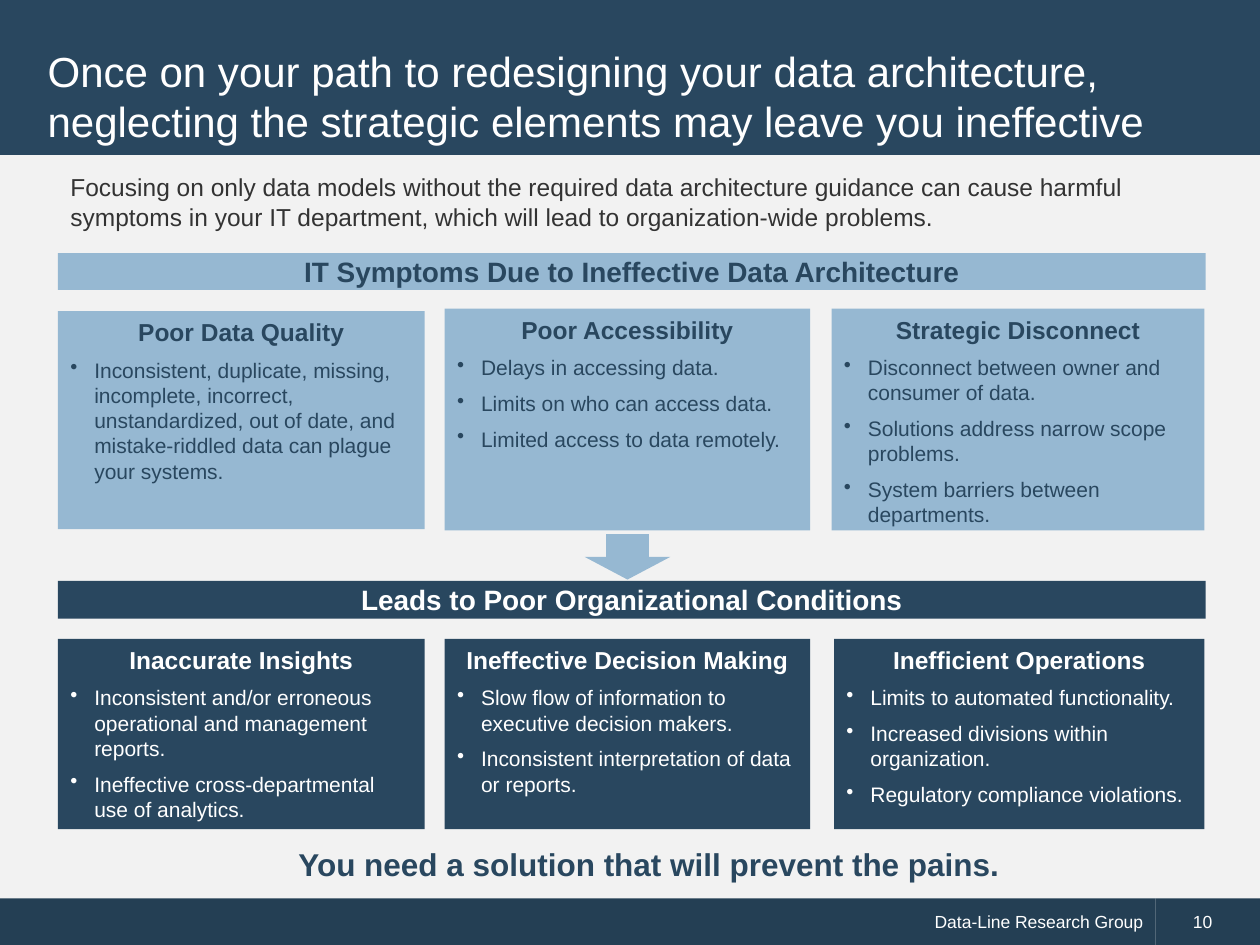
import pptx
import pptx.util
import pptx.dml.color
import pptx.enum.shapes
import pptx.enum.text
import lxml.etree

Inches = pptx.util.Inches
Pt = pptx.util.Pt
RGBColor = pptx.dml.color.RGBColor
SHAPE = pptx.enum.shapes.MSO_SHAPE
ALIGN = pptx.enum.text.PP_ALIGN
ANCHOR = pptx.enum.text.MSO_ANCHOR

NAVY = RGBColor(0x29, 0x47, 0x5F)
FOOTER = RGBColor(0x24, 0x3F, 0x54)
SKY = RGBColor(0x96, 0xB8, 0xD2)
PALE = RGBColor(0xF2, 0xF2, 0xF2)
GREY = RGBColor(0x33, 0x33, 0x33)
WHITE = RGBColor(0xFF, 0xFF, 0xFF)

prs = pptx.Presentation()
prs.slide_width, prs.slide_height = Inches(10), Inches(7.5)
s = prs.slides.add_slide(prs.slide_layouts[6])
s.background.fill.solid()
s.background.fill.fore_color.rgb = PALE


def add_box(left, top, width, height, fill=None, shape=SHAPE.RECTANGLE):
    """Add a filled shape without outline, or a text box when there is no fill."""
    at = [Inches(v) for v in (left, top, width, height)]
    if fill is None:
        sp = s.shapes.add_textbox(*at)
    else:
        sp = s.shapes.add_shape(shape, *at)
        sp.shadow.inherit = False
        sp.fill.solid()
        sp.fill.fore_color.rgb = fill
        sp.line.fill.background()
    sp.text_frame.word_wrap = True
    return sp


def add_text(sp, text, size=12, color=WHITE, bold=False, align=ALIGN.LEFT,
             anchor=ANCHOR.TOP, after=0, indent=0, bullet=False):
    """Fill the first paragraph of the shape, or append one if it is taken."""
    tf = sp.text_frame
    tf.vertical_anchor = anchor
    p = tf.paragraphs[0]
    if p.runs:
        p = tf.add_paragraph()
    p.alignment = align
    p.space_after = Pt(after)
    pPr = p._p.get_or_add_pPr()
    pPr.set("marL", str(Inches(indent)))
    if bullet:
        pPr.set("indent", str(-Inches(indent)))
        bu = lxml.etree.SubElement(pPr, pptx.oxml.ns.qn("a:buChar"))
        bu.set("char", "•")
    r = p.add_run()
    r.text = text
    r.font.name = "Arial"
    r.font.size = Pt(size)
    r.font.bold = bold
    r.font.color.rgb = color


# Title band and footer
add_box(0, 0, 10, 1.23, NAVY)
title = add_box(0.28, 0.28, 9.43, 0.96)
add_text(title, "Once on your path to redesigning your data architecture, "
         "neglecting the strategic elements may leave you ineffective",
         size=24, anchor=ANCHOR.MIDDLE)
footer = add_box(0, 7.13, 9.17, 0.37, FOOTER)
add_text(footer, "Data-Line Research Group", size=10, align=ALIGN.RIGHT,
         anchor=ANCHOR.MIDDLE, indent=0.29)
number = add_box(9.17, 7.13, 0.83, 0.37, FOOTER)
add_text(number, "10", size=10, anchor=ANCHOR.MIDDLE, indent=0.2)

# Introduction and conclusion
intro = add_box(0.46, 1.32, 9.25, 0.57)
add_text(intro, "Focusing on only data models without the required data architecture "
         "guidance can cause harmful symptoms in your IT department, which will lead "
         "to organization-wide problems.", size=14, color=GREY)
conclusion = add_box(2.27, 6.66, 5.82, 0.4)
add_text(conclusion, "You need a solution that will prevent the pains.",
         size=18, color=NAVY, bold=True)

# Each section: heading, heading top and height, fill, text colour, cards.
# Each card: left, top, width, height, heading, bullets.
sections = [
    ("IT Symptoms Due to Ineffective Data Architecture", 2.01, 0.29, SKY, NAVY, [
        (0.46, 2.47, 2.91, 1.73, "Poor Data Quality", [
            "Inconsistent, duplicate, missing, incomplete, incorrect, unstandardized, "
            "out of date, and mistake-riddled data can plague your systems."]),
        (3.53, 2.45, 2.9, 1.76, "Poor Accessibility", [
            "Delays in accessing data.",
            "Limits on who can access data.",
            "Limited access to data remotely."]),
        (6.6, 2.45, 2.96, 1.76, "Strategic Disconnect", [
            "Disconnect between owner and consumer of data.",
            "Solutions address narrow scope problems.",
            "System barriers between departments."]),
    ]),
    ("Leads to Poor Organizational Conditions", 4.61, 0.3, NAVY, WHITE, [
        (0.46, 5.07, 2.91, 1.51, "Inaccurate Insights", [
            "Inconsistent and/or erroneous operational and management reports.",
            "Ineffective cross-departmental use of analytics."]),
        (3.53, 5.07, 2.9, 1.51, "Ineffective Decision Making", [
            "Slow flow of information to executive decision makers.",
            "Inconsistent interpretation of data or reports."]),
        (6.62, 5.07, 2.94, 1.51, "Inefficient Operations", [
            "Limits to automated functionality.",
            "Increased divisions within organization.",
            "Regulatory compliance violations."]),
    ]),
]
for heading, bar_top, bar_height, fill, color, cards in sections:
    bar = add_box(0.46, bar_top, 9.11, bar_height, fill)
    add_text(bar, heading, size=16, color=color, bold=True,
             align=ALIGN.CENTER, anchor=ANCHOR.MIDDLE)
    for left, top, width, height, card_heading, bullets in cards:
        card = add_box(left, top, width, height, fill)
        add_text(card, card_heading, size=14, color=color, bold=True,
                 align=ALIGN.CENTER, after=6)
        for bullet in bullets:
            add_text(card, bullet, color=color, after=6, indent=0.19, bullet=True)

# Arrow from symptoms to conditions
add_box(4.64, 4.24, 0.68, 0.36, SKY, SHAPE.DOWN_ARROW)

prs.save("out.pptx")
